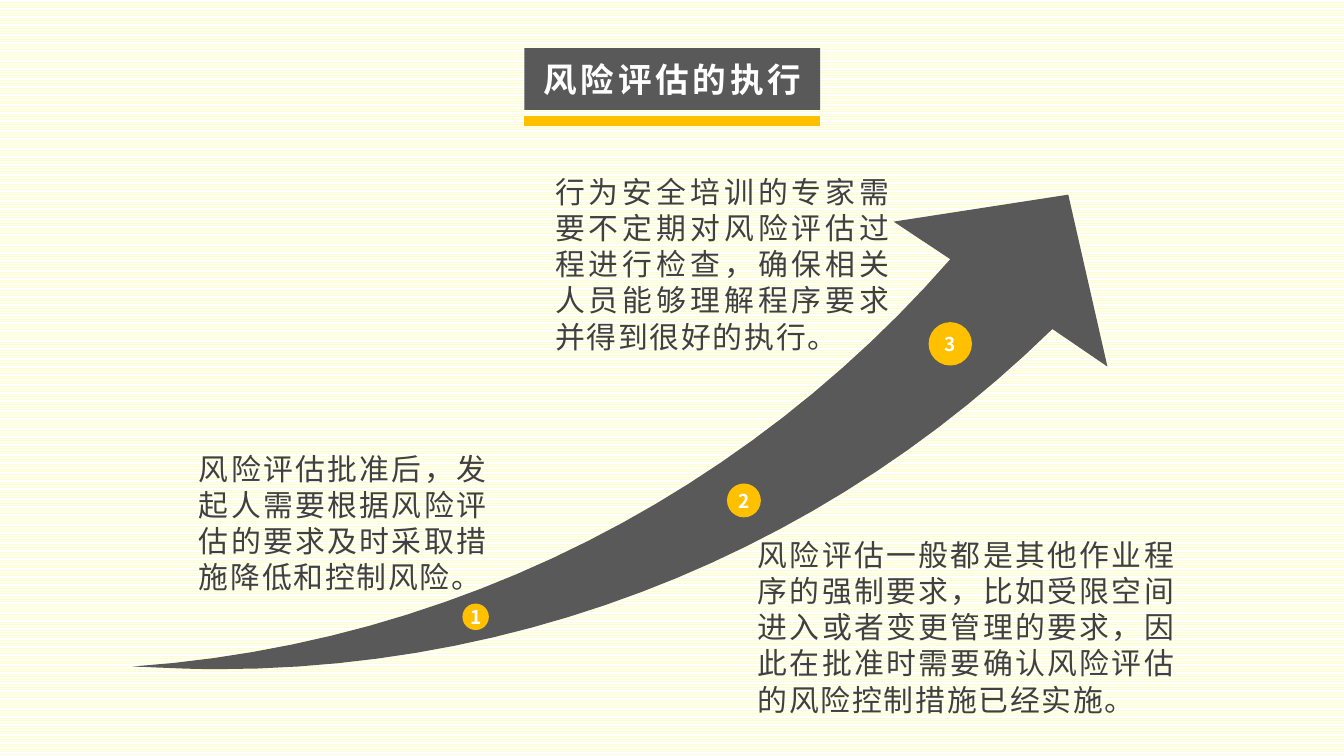
"""Build the slide on carrying out a risk assessment."""
import dataclasses

import lxml.etree
import pptx
import pptx.dml.color
import pptx.enum.dml
import pptx.enum.shapes
import pptx.enum.text
import pptx.oxml.ns
import pptx.util

Cm = pptx.util.Cm
Color = pptx.dml.color.RGBColor
Align = pptx.enum.text.PP_ALIGN
Anchor = pptx.enum.text.MSO_ANCHOR
qn = pptx.oxml.ns.qn


@dataclasses.dataclass(frozen=True)
class Theme:
    font: str = "Noto Sans CJK SC"
    dark: Color = Color.from_string("595959")
    accent: Color = Color.from_string("FFC000")
    body: Color = Color.from_string("404040")
    white: Color = Color.from_string("FFFFFF")
    stripe: Color = Color.from_string("FFFFCC")
    title_size: float = 18
    body_size: float = 16
    body_line: float = 19.4
    number_size: float = 10.2
    rule_width: float = 5


THEME = Theme()

STEPS = [
    ("风险评估批准后，发起人需要根据风险评估的要求及时采取措施降低和控制风险。",
     (1.01, 5.23, 5.97, 3.0), (6.49, 8.51, 0.5)),
    ("风险评估一般都是其他作业程序的强制要求，比如受限空间进入或者变更管理的要求，"
     "因此在批准时需要确认风险评估的风险控制措施已经实施。",
     (11.57, 6.86, 8.41, 3.68), (11.56, 6.31, 0.64)),
    ("行为安全培训的专家需要不定期对风险评估过程进行检查，确保相关人员能够理解程序要求并得到很好的执行。",
     (7.74, 0, 6.86, 3.68), (15.46, 3.35, 0.82)),
]

ARROW_LOWER_EDGE = [(17.39, 3.07), (13.32, 7.06), (7.76, 9.5), (1.61, 9.5)]
ARROW_TAIL = [(1.61, 9.5), (1.08, 9.5), (0.55, 9.47), (0.01, 9.45)]
ARROW_UPPER_EDGE = [(0.01, 9.45), (6.16, 9.02), (11.65, 6.12), (15.46, 1.75)]
ARROW_HEAD = [(14.39, 1.04), (17.69, 0.53), (18.43, 3.78)]


def write(shape, text, size, color, align, bold=False, spacing=0):
    """Put one formatted paragraph in a shape and return the paragraph."""
    shape.text_frame.text = text
    paragraph = shape.text_frame.paragraphs[0]
    paragraph.alignment = align
    font = paragraph.font
    font.size = pptx.util.Pt(size)
    font.bold = bold
    font.color.rgb = color
    font.name = THEME.font
    properties = paragraph._p.pPr.find(qn("a:defRPr"))
    properties.set("spc", str(spacing * 100))
    lxml.etree.SubElement(properties, qn("a:ea")).set("typeface", THEME.font)
    return paragraph


def set_margins(frame, horizontal, vertical):
    """Set the inner margins of a text frame."""
    frame.margin_left = frame.margin_right = Cm(horizontal)
    frame.margin_top = frame.margin_bottom = Cm(vertical)


def fill_plain(shape, color):
    """Give a shape a solid fill without outline or shadow."""
    shape.fill.solid()
    shape.fill.fore_color.rgb = color
    shape.line.fill.background()
    shape.shadow.inherit = False


def curve(points, steps=24):
    """Return points along a cubic curve, leaving out its start."""
    result = []
    for step in range(1, steps + 1):
        t = step / steps
        weights = ((1 - t) ** 3, 3 * t * (1 - t) ** 2, 3 * t * t * (1 - t), t ** 3)
        result.append(tuple(sum(w * p[axis] for w, p in zip(weights, points))
                            for axis in (0, 1)))
    return result


def add_title(slide, left, top, width, height):
    """Place the title bar and the rule beneath it."""
    title = slide.shapes.title
    title.left, title.top = Cm(left), Cm(top)
    title.width, title.height = Cm(width), Cm(height)
    title.fill.solid()
    title.fill.fore_color.rgb = THEME.dark
    frame = title.text_frame
    frame.auto_size = pptx.enum.text.MSO_AUTO_SIZE.NONE
    frame.vertical_anchor = Anchor.MIDDLE
    set_margins(frame, 0.3, 0.2)
    write(title, "风险评估的执行", THEME.title_size, THEME.white,
          Align.CENTER, bold=True, spacing=2)
    rule_top = Cm(top + height + 0.21)
    rule = slide.shapes.add_connector(
        pptx.enum.shapes.MSO_CONNECTOR.STRAIGHT,
        Cm(left), rule_top, Cm(left + width), rule_top)
    rule.line.color.rgb = THEME.accent
    rule.line.width = pptx.util.Pt(THEME.rule_width)
    lxml.etree.SubElement(rule._element.spPr, qn("a:effectLst"))


def add_arrow(slide, left, top):
    """Draw the rising curved arrow."""
    outline = (curve(ARROW_LOWER_EDGE) + curve(ARROW_TAIL)
               + curve(ARROW_UPPER_EDGE) + ARROW_HEAD)
    start_x, start_y = ARROW_LOWER_EDGE[0]
    builder = slide.shapes.build_freeform(Cm(start_x), Cm(start_y))
    builder.add_line_segments([(Cm(x), Cm(y)) for x, y in outline], close=True)
    fill_plain(builder.convert_to_shape(Cm(left), Cm(top)), THEME.dark)


def add_step(slide, left, top, number, text, text_box, marker):
    """Place one step's description and numbered marker."""
    x, y, width, height = text_box
    box = slide.shapes.add_textbox(Cm(left + x), Cm(top + y), Cm(width), Cm(height))
    box.text_frame.word_wrap = True
    paragraph = write(box, text, THEME.body_size, THEME.body,
                      Align.JUSTIFY, spacing=1)
    paragraph.line_spacing = pptx.util.Pt(THEME.body_line)

    center_x, center_y, diameter = marker
    circle = slide.shapes.add_shape(
        pptx.enum.shapes.MSO_SHAPE.OVAL,
        Cm(left + center_x - diameter / 2), Cm(top + center_y - diameter / 2),
        Cm(diameter), Cm(diameter))
    fill_plain(circle, THEME.accent)
    circle.text_frame.word_wrap = False
    circle.text_frame.vertical_anchor = Anchor.MIDDLE
    set_margins(circle.text_frame, 0, 0)
    write(circle, str(number), THEME.number_size, THEME.white,
          Align.CENTER, bold=True)


def add_diagram(slide, left, top):
    """Place the arrow and its three steps."""
    add_arrow(slide, left, top)
    for number, (text, text_box, marker) in enumerate(STEPS, start=1):
        add_step(slide, left, top, number, text, text_box, marker)


def main():
    """Build and save the presentation."""
    presentation = pptx.Presentation()
    presentation.slide_width = Cm(25.4)
    presentation.slide_height = Cm(14.29)
    slide = presentation.slides.add_slide(presentation.slide_layouts[5])
    background = slide.background.fill
    background.patterned()
    background.pattern = pptx.enum.dml.MSO_PATTERN.LIGHT_HORIZONTAL
    background.fore_color.rgb = THEME.stripe
    background.back_color.rgb = THEME.white
    add_title(slide, 9.91, 0.91, 5.59, 1.17)
    add_diagram(slide, 2.5, 3.15)
    presentation.save("out.pptx")


if __name__ == "__main__":
    main()
